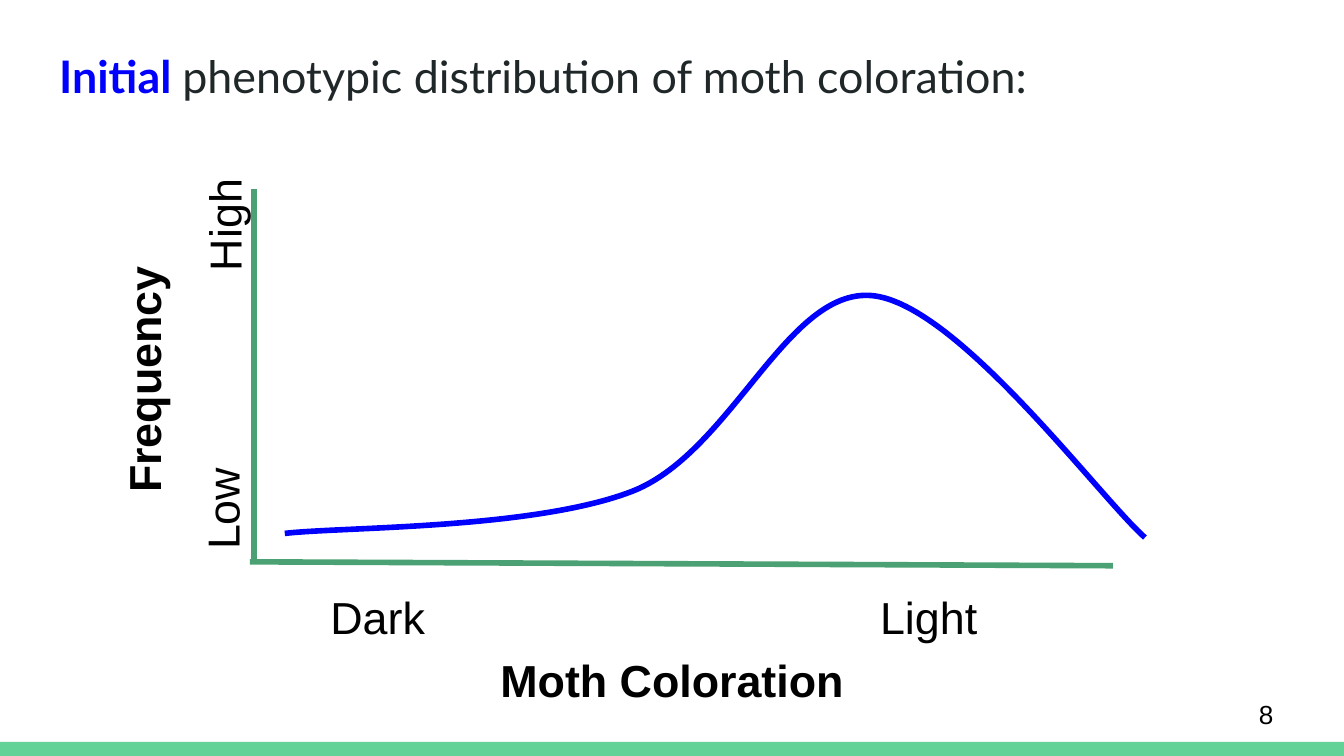
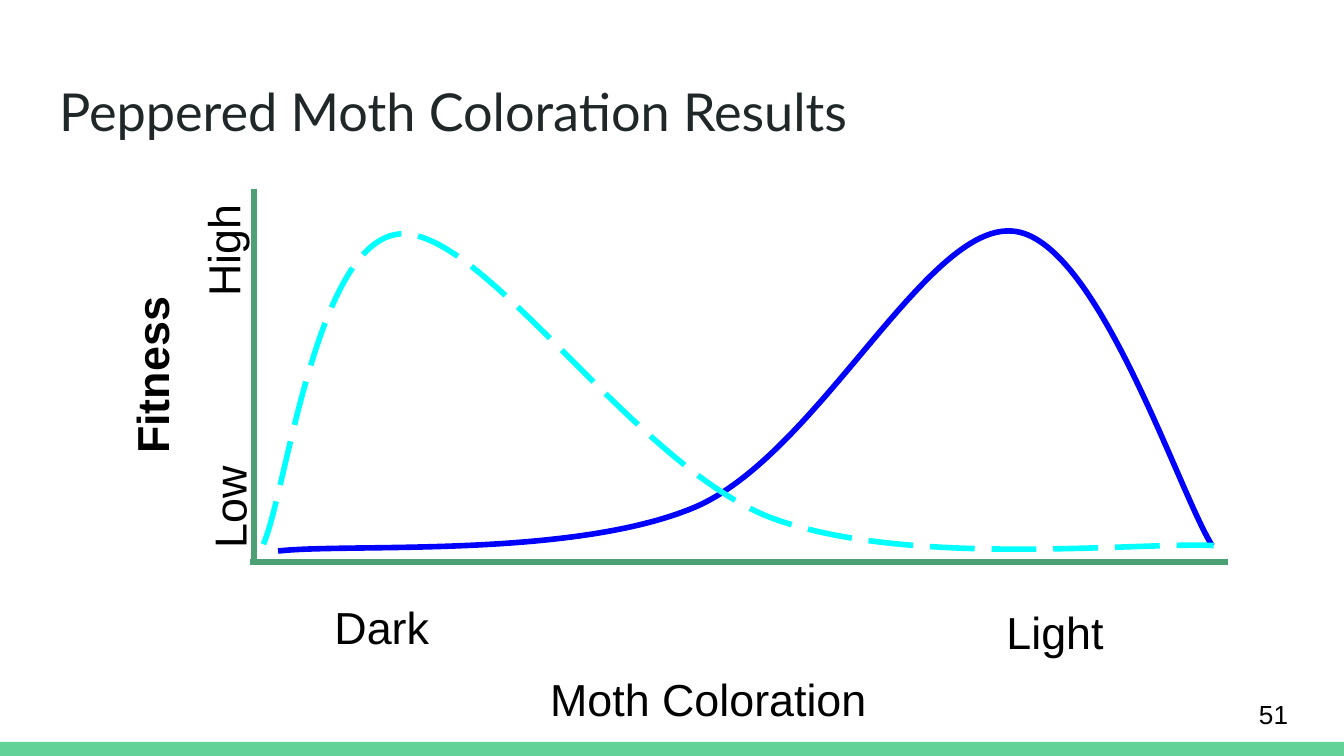
"""Build two slides of hand-drawn moth coloration curves."""
from lxml import etree
from pptx import Presentation
from pptx.dml.color import RGBColor
from pptx.enum import dml, shapes, text
from pptx.oxml.ns import qn
from pptx.util import Pt

BAND_GREEN = RGBColor(0x63, 0xD2, 0x97)
AXIS_GREEN = RGBColor(0x4B, 0xA1, 0x73)
BLUE = RGBColor(0x00, 0x00, 0xFF)
CYAN = RGBColor(0x00, 0xFF, 0xFF)
INK = RGBColor(0x20, 0x27, 0x29)
BLACK = RGBColor(0x00, 0x00, 0x00)

TITLE_FONT, LABEL_FONT = "Lato", "Arial"
LINE_WIDTH = Pt(3)
INSET = Pt(7.2)
AXIS_X, AXIS_TOP, AXIS_BOTTOM, AXIS_START = 136.1, 101.5, 301, 133.9
UPRIGHT, SIDEWAYS = 0, 270

SLIDES = [
    {
        "title": [("Initial ", BLUE, True),
                  ("phenotypic distribution of moth coloration:", INK, False)],
        "title_top": 18.7,
        "title_size": 24,
        "number": "8",
        "axis_end": (596.2, 303.1),
        "axis_title": ("Moth Coloration", (229, 342.7, 262.1, 45.4), True),
        "labels": [
            ("Dark", (169.9, 308.9, 100.8, 20.9), UPRIGHT, False),
            ("Light", (464.4, 308.9, 111.6, 15.8), UPRIGHT, False),
            ("Frequency", (-2.9, 192.2, 136.8, 20.9), SIDEWAYS, True),
            ("Low", (77, 259.2, 62.6, 22.3), SIDEWAYS, False),
            ("High", (76.3, 109.4, 64.8, 20.9), SIDEWAYS, False),
        ],
        "curves": [
            (BLUE, None, [
                (152.6, 285.8),
                (183.6, 282.2), (287.3, 283.7), (339.8, 262.8),
                (392.4, 241.2), (421.9, 154.1), (467.3, 158.4),
                (512.6, 162.7), (589, 266.4), (613.4, 288)]),
        ],
    },
    {
        "title": [("Peppered Moth Coloration Results", INK, False)],
        "title_top": 35.3,
        "title_size": 28,
        "number": "51",
        "axis_end": (658.1, 301),
        "axis_title": ("Moth Coloration", (283.7, 352.8, 191.5, 23), False),
        "labels": [
            ("Dark", (172.1, 313.9, 111.6, 20.9), UPRIGHT, False),
            ("Light", (532.1, 316.8, 111.6, 15.8), UPRIGHT, False),
            ("Fitness", (-1.4, 168.5, 142.6, 20.9), SIDEWAYS, True),
            ("Low", (78.5, 256.3, 67, 22.3), SIDEWAYS, False),
            ("High", (75.6, 123.1, 64.8, 20.9), SIDEWAYS, False),
        ],
        "curves": [
            (BLUE, None, [
                (149, 295.2),
                (186.5, 290.9), (307.4, 299.5), (373, 271.4),
                (438.5, 242.6), (496.1, 120.2), (542.2, 123.8),
                (587.5, 126.7), (631.4, 264.2), (649.4, 292.3)]),
            (CYAN, dml.MSO_LINE.LONG_DASH, [
                (141.1, 291.6),
                (153.4, 264.2), (169.2, 128.2), (214.6, 125.3),
                (259.9, 123.1), (339.8, 249.1), (412.6, 277.2),
                (485.3, 304.6), (610.6, 290.2), (650.2, 292.3)]),
        ],
    },
]


def points(values):
    return [Pt(value) for value in values]


def set_frame(frame, anchor=text.MSO_ANCHOR.TOP):
    frame.word_wrap = True
    frame.auto_size = text.MSO_AUTO_SIZE.NONE
    frame.vertical_anchor = anchor
    frame.margin_left = frame.margin_right = INSET
    frame.margin_top = frame.margin_bottom = INSET


def add_band(presentation, slide):
    band = slide.shapes.add_shape(
        shapes.MSO_SHAPE.RECTANGLE, *points((0, 397.5, 720, 7.5)))
    band.shadow.inherit = False
    band.fill.solid()
    band.fill.fore_color.rgb = BAND_GREEN
    band.line.fill.background()
    presentation.slide_master.shapes._spTree.append(band._element)


def add_title(slide, runs, top, size):
    title = slide.shapes.title
    title.left, title.top, title.width, title.height = points(
        (24.5, top, 671, 45.4))
    set_frame(title.text_frame)
    paragraph = title.text_frame.paragraphs[0]
    paragraph.alignment = text.PP_ALIGN.LEFT
    paragraph.font.name = TITLE_FONT
    paragraph.font.size = Pt(size)
    for words, color, bold in runs:
        run = paragraph.add_run()
        run.text = words
        run.font.color.rgb = color
        run.font.bold = bold


def add_label(slide, words, box, rotation=UPRIGHT, bold=False, size=24,
              align=text.PP_ALIGN.LEFT, anchor=text.MSO_ANCHOR.TOP):
    label = slide.shapes.add_textbox(*points(box))
    label.rotation = rotation
    set_frame(label.text_frame, anchor)
    paragraph = label.text_frame.paragraphs[0]
    paragraph.text = words
    paragraph.alignment = align
    paragraph.font.name = LABEL_FONT
    paragraph.font.size = Pt(size)
    paragraph.font.bold = bold
    paragraph.font.color.rgb = BLACK


def add_axis(slide, start, end):
    axis = slide.shapes.add_connector(
        shapes.MSO_CONNECTOR.STRAIGHT, *points(start + end))
    axis.line.color.rgb = AXIS_GREEN
    axis.line.width = LINE_WIDTH
    etree.SubElement(axis._element.spPr, qn("a:effectLst"))


def add_curve(slide, color, dash, knots):
    knots = [points(knot) for knot in knots]
    start, *anchors = knots[::3]
    builder = slide.shapes.build_freeform(*start)
    builder.add_line_segments(anchors, close=False)
    curve = builder.convert_to_shape()
    segments = list(curve._element.iter(qn("a:lnTo")))
    for index, segment in enumerate(segments):
        segment.tag = qn("a:cubicBezTo")
        for position, (x, y) in enumerate(knots[3 * index + 1:3 * index + 3]):
            control = etree.Element(
                qn("a:pt"), x=str(x - curve.left), y=str(y - curve.top))
            segment.insert(position, control)
    curve.shadow.inherit = False
    curve.fill.background()
    curve.line.color.rgb = color
    curve.line.width = LINE_WIDTH
    if dash:
        curve.line.dash_style = dash


def build_slide(slide, content):
    add_title(slide, content["title"], content["title_top"],
              content["title_size"])
    add_axis(slide, (AXIS_X, AXIS_TOP), (AXIS_X, AXIS_BOTTOM))
    add_axis(slide, (AXIS_START, AXIS_BOTTOM), content["axis_end"])
    words, box, bold = content["axis_title"]
    add_label(slide, words, box, bold=bold, align=text.PP_ALIGN.CENTER)
    for label in content["labels"]:
        add_label(slide, *label)
    for curve in content["curves"]:
        add_curve(slide, *curve)
    add_label(slide, content["number"], (667.4, 367.2, 43.2, 31), size=14,
              anchor=text.MSO_ANCHOR.MIDDLE)


def main():
    presentation = Presentation()
    presentation.slide_width, presentation.slide_height = points((720, 405))
    title_only = presentation.slide_layouts[5]
    slides = [presentation.slides.add_slide(title_only) for _ in SLIDES]
    add_band(presentation, slides[0])
    for slide, content in zip(slides, SLIDES):
        build_slide(slide, content)
    presentation.save("out.pptx")


if __name__ == "__main__":
    main()
